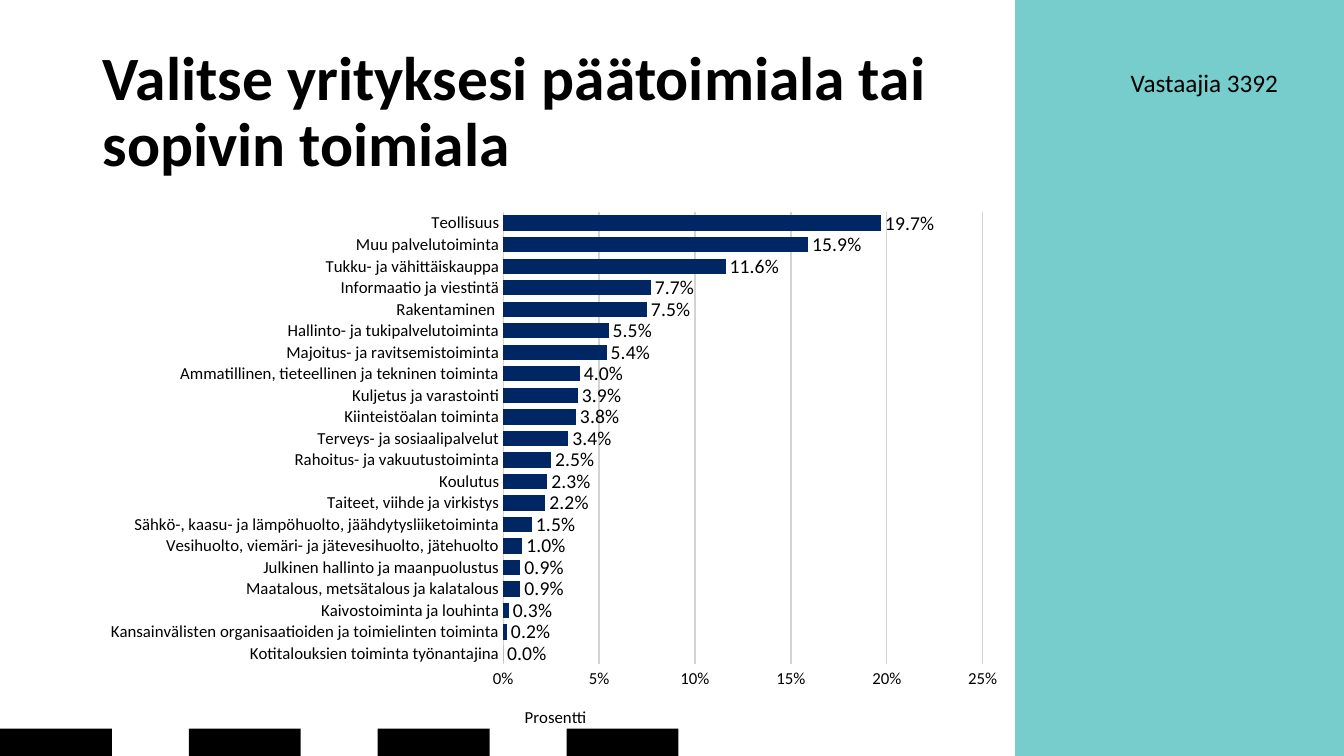
"""Build a slide with a bar chart of respondents by line of business."""
import pptx
import pptx.chart.data
import pptx.dml.color
import pptx.enum.chart
import pptx.enum.shapes
import pptx.enum.text
import pptx.oxml
import pptx.oxml.ns
import pptx.util

Cm, Pt = pptx.util.Cm, pptx.util.Pt
enum = pptx.enum.chart


def style(font, size, **more):
    look = {"name": "Calibri", "size": Pt(size), "bold": False, **more}
    for key, value in look.items():
        setattr(font, key, value)
    font.color.rgb = pptx.dml.color.RGBColor.from_string("000000")


def place(host, index, **parts):
    for old in host.findall(pptx.oxml.ns.qn("c:layout")):
        host.remove(old)
    rows = "".join(f'<c:{key} val="{value}"/>' for key, value in parts.items())
    host.insert(index, pptx.oxml.parse_xml(
        f'<c:layout {pptx.oxml.ns.nsdecls("c")}><c:manualLayout>{rows}'
        '</c:manualLayout></c:layout>'))


deck = pptx.Presentation()
deck.slide_width, deck.slide_height = Cm(33.87), Cm(19.05)
slide = deck.slides.add_slide(deck.slide_layouts[5])

blocks = [(25.58, 0, 8.29, 19.05, "77CDCB")]
blocks += [(4.76 * i, 18.36, 2.82, 0.69, "000000") for i in range(4)]
for *box, color in blocks:
    block = slide.shapes.add_shape(
        pptx.enum.shapes.MSO_SHAPE.RECTANGLE, *map(Cm, box))
    block.shadow.inherit = False
    block.fill.solid()
    block.fill.fore_color.rgb = pptx.dml.color.RGBColor.from_string(color)
    block.line.fill.background()

title = slide.shapes.title
spot = {"left": 2.34, "top": 1.02, "width": 23.24, "height": 3.68}
for key, value in spot.items():
    setattr(title, key, Cm(value))
frame = title.text_frame
frame.text = "Valitse yrityksesi päätoimiala tai sopivin toimiala"
frame.word_wrap = True
frame.auto_size = pptx.enum.text.MSO_AUTO_SIZE.NONE
frame.vertical_anchor = pptx.enum.text.MSO_ANCHOR.MIDDLE
head = frame.paragraphs[0]
head.alignment = pptx.enum.text.PP_ALIGN.LEFT
head.line_spacing = 0.9
style(head.runs[0].font, 44, bold=True)

note = slide.shapes.add_textbox(Cm(27.2), Cm(1.57), Cm(5.26), Cm(1.02)).text_frame
note.word_wrap = True
note.auto_size = pptx.enum.text.MSO_AUTO_SIZE.SHAPE_TO_FIT_TEXT
note.text = "Vastaajia 3392"
note.paragraphs[0].alignment = pptx.enum.text.PP_ALIGN.RIGHT
style(note.paragraphs[0].runs[0].font, 18)

shares = {
    "Kotitalouksien toiminta työnantajina": 0,
    "Kansainvälisten organisaatioiden ja toimielinten toiminta": 0.002,
    "Kaivostoiminta ja louhinta": 0.003,
    "Maatalous, metsätalous ja kalatalous": 0.009,
    "Julkinen hallinto ja maanpuolustus": 0.009,
    "Vesihuolto, viemäri- ja jätevesihuolto, jätehuolto": 0.01,
    "Sähkö-, kaasu- ja lämpöhuolto, jäähdytysliiketoiminta": 0.015,
    "Taiteet, viihde ja virkistys": 0.022,
    "Koulutus": 0.023,
    "Rahoitus- ja vakuutustoiminta": 0.025,
    "Terveys- ja sosiaalipalvelut": 0.034,
    "Kiinteistöalan toiminta": 0.038,
    "Kuljetus ja varastointi": 0.039,
    "Ammatillinen, tieteellinen ja tekninen toiminta": 0.04,
    "Majoitus- ja ravitsemistoiminta": 0.054,
    "Hallinto- ja tukipalvelutoiminta": 0.055,
    "Rakentaminen ": 0.075,
    "Informaatio ja viestintä": 0.077,
    "Tukku- ja vähittäiskauppa": 0.116,
    "Muu palvelutoiminta": 0.159,
    "Teollisuus": 0.197,
}
data = pptx.chart.data.CategoryChartData(number_format="0.0%")
data.categories = list(shares)
data.add_series("Series 1", list(shares.values()))
chart = slide.shapes.add_chart(
    enum.XL_CHART_TYPE.BAR_CLUSTERED,
    Cm(2.34), Cm(5.08), Cm(23.24), Cm(13.72), data).chart
chart.has_title = chart.has_legend = False
style(chart.font, 11)
place(chart._chartSpace.chart.plotArea, 0, layoutTarget="inner",
      xMode="edge", yMode="edge", x=0.445, y=0.02, w=0.52, h=0.83)

plot = chart.plots[0]
plot.gap_width = 40
plot.vary_by_categories = False
bars = plot.series[0].format.fill
bars.solid()
bars.fore_color.rgb = pptx.dml.color.RGBColor.from_string("002663")
plot.has_data_labels = True
labels = plot.data_labels
look = {"show_value": True, "number_format": "0.0%",
        "number_format_is_linked": False,
        "position": enum.XL_LABEL_POSITION.OUTSIDE_END}
for key, value in look.items():
    setattr(labels, key, value)
style(labels.font, 14)

for axis in (chart.category_axis, chart.value_axis):
    axis.major_tick_mark = enum.XL_TICK_MARK.INSIDE
    axis.minor_tick_mark = enum.XL_TICK_MARK.NONE
    axis.format.line.fill.background()
    style(axis.tick_labels.font, 12)

scale = chart.value_axis
look = {"minimum_scale": 0, "maximum_scale": 0.25, "major_unit": 0.05,
        "has_major_gridlines": True, "has_title": True}
for key, value in look.items():
    setattr(scale, key, value)
scale.tick_labels.number_format = "0%"
scale.tick_labels.number_format_is_linked = False
grid = scale.major_gridlines.format.line
grid.width = Pt(1)
grid.color.rgb = pptx.dml.color.RGBColor.from_string("D3D3D3")
scale.axis_title.text_frame.text = "Prosentti"
style(scale.axis_title.text_frame.paragraphs[0].runs[0].font, 12)
place(scale.axis_title._element, 1, xMode="edge", yMode="edge", x=0.465, y=0.92)

deck.save("out.pptx")
